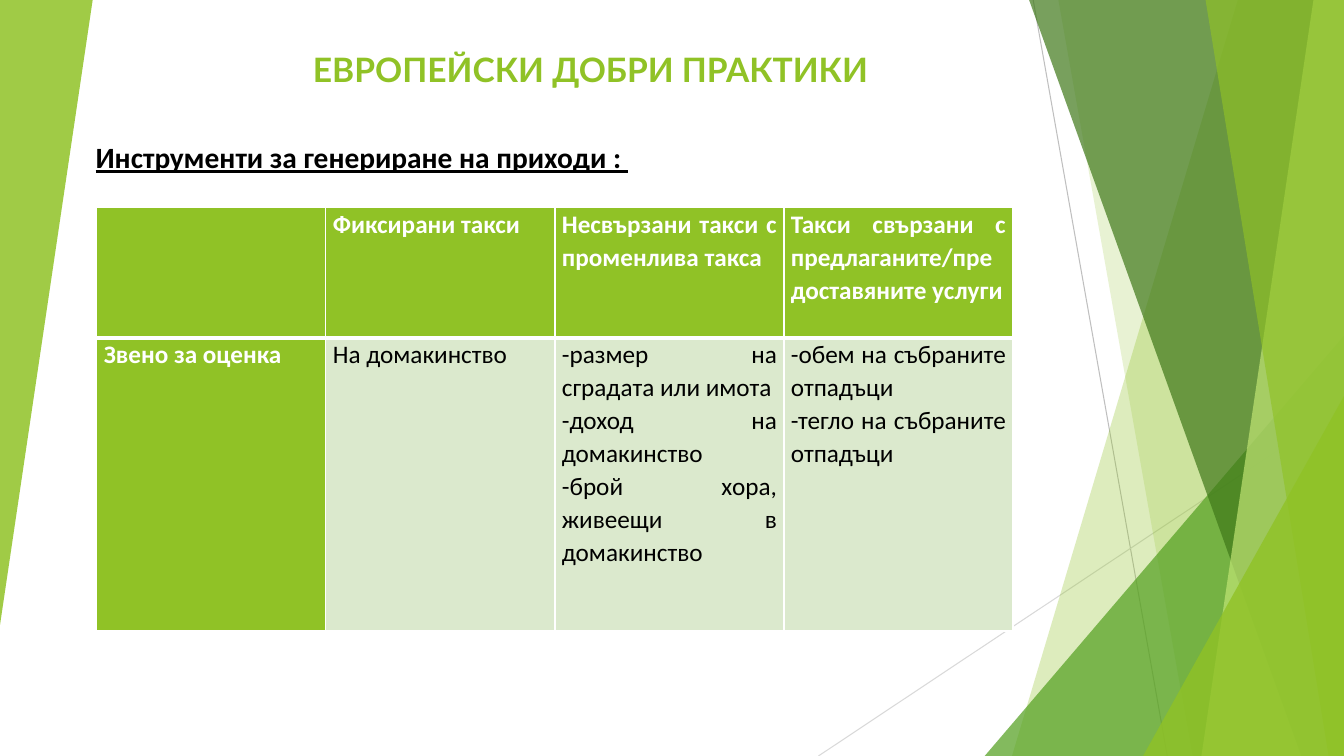
import pptx
import pptx.util
import pptx.dml.color
import pptx.enum.shapes
import pptx.enum.text
import pptx.oxml
import pptx.oxml.ns

Pt = pptx.util.Pt
qn = pptx.oxml.ns.qn
ALIGN = pptx.enum.text.PP_ALIGN
ANCHOR = pptx.enum.text.MSO_ANCHOR

WIDTH, HEIGHT = 960, 540
COLORS = {
    "lime": "90C226", "green": "54A021", "forest": "3F7819", "pale": "C0E474",
    "mint": "DBE9CD", "white": "FFFFFF", "black": "000000",
    "gray": "BFBFBF", "silver": "D9D9D9",
}
# Top x, bottom x, colour, opacity in percent; each band runs to the right edge.
BACK_BANDS = [(884.2, 722.9, "lime", 30), (756, 851.8, "lime", 20)]
FRONT_BANDS = [
    (735.1, 929.5, "forest", 70),
    (938.2, 858.2, "pale", 70),
    (861.1, 949, "lime", 65),
]
TABLE_ROWS = [
    ["", "Фиксирани такси", "Несвързани такси с променлива такса",
     "Такси свързани с предлаганите/предоставяните услуги"],
    ["Звено за оценка", "На домакинство",
     "-размер на сградата или имота\n-доход на домакинство\n"
     "-брой хора, живеещи в домакинство",
     "-обем на събраните отпадъци\n-тегло на събраните отпадъци"],
]


def rgb(name):
    return pptx.dml.color.RGBColor.from_string(COLORS[name])


def paint(shape, color, opacity):
    """Give a shape a see-through fill without line or shadow."""
    shape.shadow.inherit = False
    shape.line.fill.background()
    shape.fill.solid()
    shape.fill.fore_color.rgb = rgb(color)
    tint = shape.element.spPr.find(qn("a:solidFill")).find(qn("a:srgbClr"))
    tint.append(pptx.oxml.parse_xml(
        '<a:alpha xmlns:a="http://schemas.openxmlformats.org/drawingml/2006/main"'
        f' val="{opacity * 1000}"/>'))


def add_band(page, top_x, bottom_x, color, opacity):
    corners = [(WIDTH, 0), (WIDTH, HEIGHT), (bottom_x, HEIGHT)]
    builder = page.shapes.build_freeform(Pt(top_x), 0, scale=1.0)
    builder.add_line_segments([(Pt(x), Pt(y)) for x, y in corners], close=True)
    paint(builder.convert_to_shape(), color, opacity)


def add_corner(page, left, top, width, height, color, opacity, rotation=0):
    """Add a right triangle whose apex is above its right end."""
    corner = page.shapes.add_shape(
        pptx.enum.shapes.MSO_SHAPE.ISOSCELES_TRIANGLE,
        Pt(left), Pt(top), Pt(width), Pt(height))
    corner.adjustments[0] = 1
    corner.rotation = rotation
    paint(corner, color, opacity)


def add_thin_line(page, start, end, color):
    line = page.shapes.add_connector(
        pptx.enum.shapes.MSO_CONNECTOR.STRAIGHT,
        *(Pt(value) for value in start + end))
    line.line.color.rgb = rgb(color)
    line.line.width = Pt(0.75)
    line.element.spPr.append(pptx.oxml.parse_xml(
        '<a:effectLst xmlns:a="http://schemas.openxmlformats.org/drawingml/2006/main"/>'))


def add_backdrop(page):
    add_thin_line(page, (738, 0), (833.8, HEIGHT), "gray")
    add_thin_line(page, (WIDTH, 290.2), (584.6, HEIGHT), "silver")
    for band in BACK_BANDS:
        add_band(page, *band)
    add_corner(page, 703.4, 239.8, WIDTH - 703.4, HEIGHT - 239.8, "green", 72)
    for band in FRONT_BANDS:
        add_band(page, *band)
    add_corner(page, 816.5, 283, WIDTH - 816.5, HEIGHT - 283, "lime", 80)
    add_corner(page, 0, 0, 66.2, 446.4, "lime", 85, rotation=180)


def style_para(para, size, color, font, bold):
    for span in para.runs:
        span.font.name = font
        span.font.size = Pt(size)
        span.font.bold = bold
        span.font.color.rgb = rgb(color)


def add_heading(page, left, top, width, height, text, size, color, font,
                align, anchor, underline=False):
    box = page.shapes.add_textbox(Pt(left), Pt(top), Pt(width), Pt(height))
    frame = box.text_frame
    frame.word_wrap = True
    frame.vertical_anchor = anchor
    frame.text = text
    para = frame.paragraphs[0]
    para.alignment = align
    style_para(para, size, color, font, True)
    para.runs[0].font.underline = underline


def add_borders(cell, widths):
    """Draw white borders; widths maps each side letter to points."""
    properties = cell._tc.get_or_add_tcPr()
    for side, width in widths.items():
        properties.append(pptx.oxml.parse_xml(
            f'<a:ln{side} xmlns:a="http://schemas.openxmlformats.org/drawingml/2006/main"'
            f' w="{Pt(width)}"><a:solidFill><a:srgbClr val="{COLORS["white"]}"/>'
            f'</a:solidFill></a:ln{side}>'))


def add_fee_table(page, left, top, width, heights):
    columns = len(TABLE_ROWS[0])
    table = page.shapes.add_table(
        len(TABLE_ROWS), columns, Pt(left), Pt(top), Pt(width),
        Pt(sum(heights))).table
    for column in table.columns:
        column.width = Pt(width / columns)
    for row_index, texts in enumerate(TABLE_ROWS):
        table.rows[row_index].height = Pt(heights[row_index])
        for column_index, text in enumerate(texts):
            cell = table.cell(row_index, column_index)
            is_label = row_index == 0 or column_index == 0
            add_borders(cell, {"L": 1, "R": 1, "T": 1 if row_index == 0 else 3,
                               "B": 3 if row_index == 0 else 1})
            cell.fill.solid()
            cell.fill.fore_color.rgb = rgb("lime" if is_label else "mint")
            cell.margin_left = cell.margin_right = Pt(5)
            cell.margin_top = cell.margin_bottom = 0
            cell.text_frame.text = text
            for para in cell.text_frame.paragraphs:
                para.alignment = ALIGN.JUSTIFY
                para.line_spacing = 1.07
                style_para(para, 18, "white" if is_label else "black",
                           "Calibri", is_label)


def main():
    deck = pptx.Presentation()
    deck.slide_width, deck.slide_height = Pt(WIDTH), Pt(HEIGHT)
    page = deck.slides.add_slide(deck.slide_layouts[6])
    add_backdrop(page)
    add_heading(page, 69, 16.6, 705.6, 50.4, "ЕВРОПЕЙСКИ ДОБРИ ПРАКТИКИ",
                24, "lime", "Lato", ALIGN.CENTER, ANCHOR.BOTTOM)
    add_heading(page, 61.2, 95.8, 735.8, 40,
                "Инструменти за генериране на приходи : ",
                21, "black", "Calibri", ALIGN.LEFT, ANCHOR.TOP, underline=True)
    add_fee_table(page, 69.2, 148.4, 654.4, (92.9, 209.5))
    deck.save("out.pptx")


if __name__ == "__main__":
    main()
